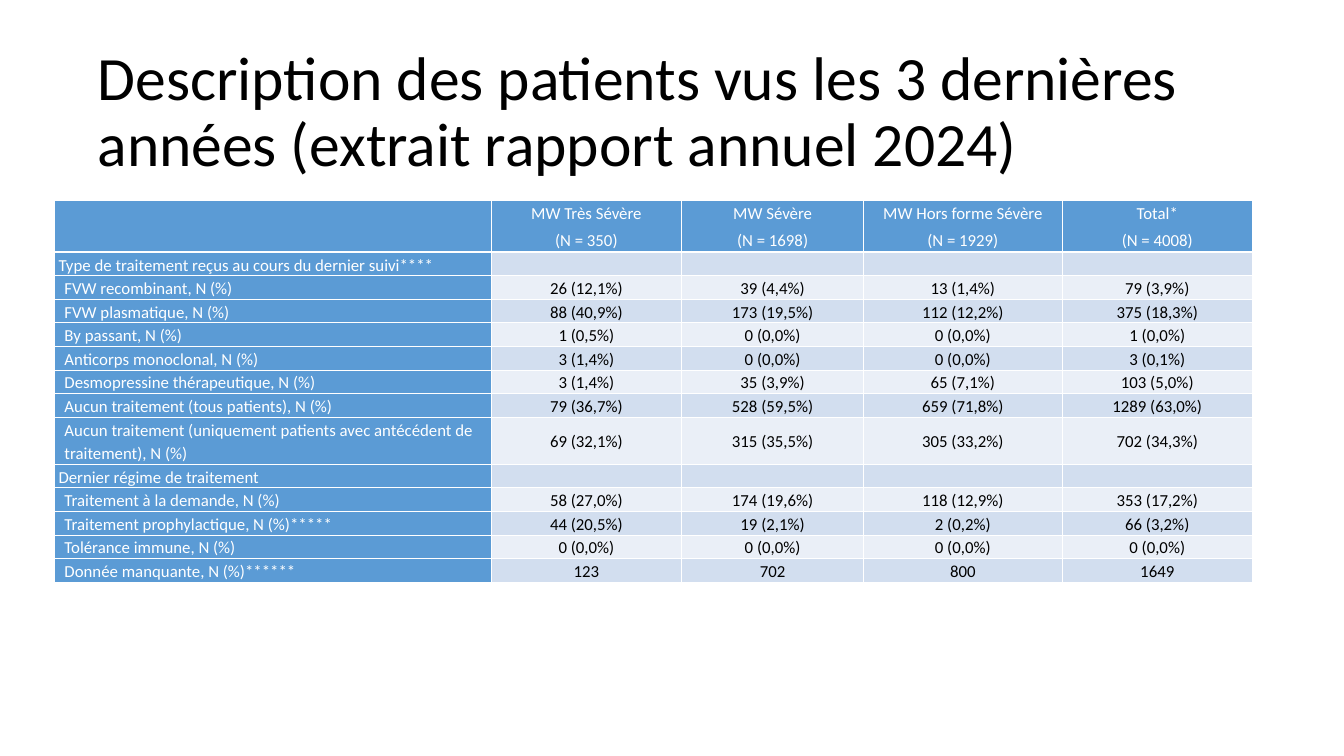
import dataclasses

import lxml.etree
import pptx
import pptx.dml.color
import pptx.enum.text
import pptx.oxml.ns
import pptx.util

Cm = pptx.util.Cm
Pt = pptx.util.Pt
ALIGN = pptx.enum.text.PP_ALIGN
MIDDLE = pptx.enum.text.MSO_ANCHOR.MIDDLE

TITLE = "Description des patients vus les 3 dernières années (extrait rapport annuel 2024)"
GROUPS = ["", "MW Très Sévère\n(N = 350)", "MW Sévère\n(N = 1698)",
          "MW Hors forme Sévère\n(N = 1929)", "Total*\n(N = 4008)"]
# A row holding only its label is a section heading.
TREATMENTS = [
    ["Type de traitement reçus au cours du dernier suivi****"],
    ["FVW recombinant, N (%)", "26 (12,1%)", "39 (4,4%)", "13 (1,4%)", "79 (3,9%)"],
    ["FVW plasmatique, N (%)", "88 (40,9%)", "173 (19,5%)", "112 (12,2%)", "375 (18,3%)"],
    ["By passant, N (%)", "1 (0,5%)", "0 (0,0%)", "0 (0,0%)", "1 (0,0%)"],
    ["Anticorps monoclonal, N (%)", "3 (1,4%)", "0 (0,0%)", "0 (0,0%)", "3 (0,1%)"],
    ["Desmopressine thérapeutique, N (%)", "3 (1,4%)", "35 (3,9%)", "65 (7,1%)", "103 (5,0%)"],
    ["Aucun traitement (tous patients), N (%)",
     "79 (36,7%)", "528 (59,5%)", "659 (71,8%)", "1289 (63,0%)"],
    ["Aucun traitement (uniquement patients avec antécédent de traitement), N (%)",
     "69 (32,1%)", "315 (35,5%)", "305 (33,2%)", "702 (34,3%)"],
    ["Dernier régime de traitement"],
    ["Traitement à la demande, N (%)", "58 (27,0%)", "174 (19,6%)", "118 (12,9%)", "353 (17,2%)"],
    ["Traitement prophylactique, N (%)*****", "44 (20,5%)", "19 (2,1%)", "2 (0,2%)", "66 (3,2%)"],
    ["Tolérance immune, N (%)", "0 (0,0%)", "0 (0,0%)", "0 (0,0%)", "0 (0,0%)"],
    ["Donnée manquante, N (%)******", "123", "702", "800", "1649"],
]
COLUMN_WIDTHS = [22, 9.6, 9.17, 10, 9.6]
HEADER_HEIGHT, ROW_HEIGHT, WRAPPED_HEIGHT = 2.62, 1.09, 2.26
LONGEST_LABEL = max((row[0] for row in TREATMENTS), key=len)


@dataclasses.dataclass(frozen=True)
class Theme:
    font: str = "Calibri"
    title_size: int = 88
    table_size: int = 24
    ink: str = "000000"
    light: str = "FFFFFF"
    accent: str = "5B9BD5"
    bands: tuple = ("D2DEEF", "EAEFF7")
    rule: int = 1
    header_rule: int = 3


def rgb(code):
    return pptx.dml.color.RGBColor.from_string(code)


class SlideBuilder:
    def __init__(self, slide, theme):
        self.slide = slide
        self.theme = theme

    def style(self, paragraph, size, color, align, spacing):
        paragraph.alignment = align
        paragraph.line_spacing = spacing
        paragraph.font.name = self.theme.font
        paragraph.font.size = Pt(size)
        paragraph.font.color.rgb = rgb(color)

    def title(self, text, left, top, width, height):
        title = self.slide.shapes.title
        title.left, title.top, title.width, title.height = map(Cm, (left, top, width, height))
        frame = title.text_frame
        frame.text = text
        frame.word_wrap = True
        frame.auto_size = pptx.enum.text.MSO_AUTO_SIZE.NONE
        frame.vertical_anchor = MIDDLE
        self.style(frame.paragraphs[0], self.theme.title_size, self.theme.ink, ALIGN.LEFT, 0.9)

    def borders(self, cell, top, bottom):
        """Rule all four sides; top and bottom are widths in points."""
        properties = cell._tc.get_or_add_tcPr()
        rule = self.theme.rule
        for side, width in (("L", rule), ("R", rule), ("T", top), ("B", bottom)):
            line = lxml.etree.SubElement(
                properties, pptx.oxml.ns.qn(f"a:ln{side}"), w=str(Pt(width)))
            fill = lxml.etree.SubElement(line, pptx.oxml.ns.qn("a:solidFill"))
            lxml.etree.SubElement(fill, pptx.oxml.ns.qn("a:srgbClr"), val=self.theme.light)

    def cell(self, cell, text, fill, color, align, indent=0.0):
        cell.fill.solid()
        cell.fill.fore_color.rgb = rgb(fill)
        cell.vertical_anchor = MIDDLE
        cell.margin_left = cell.margin_right = Cm(0.2)
        cell.margin_top = cell.margin_bottom = 0
        if not text:
            return
        cell.text = text
        for index, paragraph in enumerate(cell.text_frame.paragraphs):
            if indent:
                paragraph._p.get_or_add_pPr().set("marL", str(Cm(indent)))
            self.style(paragraph, self.theme.table_size, color, align, 1.15)
            if index:
                paragraph.space_before = Pt(5)

    def table(self, header, body, left, top, widths, heights):
        theme = self.theme
        table = self.slide.shapes.add_table(
            len(heights), len(widths), Cm(left), Cm(top),
            Cm(sum(widths)), Cm(sum(heights))).table
        for column, width in zip(table.columns, widths):
            column.width = Cm(width)
        for row, height in zip(table.rows, heights):
            row.height = Cm(height)

        for r, values in enumerate([header] + body):
            is_section = len(values) == 1
            padded = values + [""] * (len(widths) - len(values))
            for c, text in enumerate(padded):
                cell = table.cell(r, c)
                self.borders(cell, theme.header_rule if r == 1 else theme.rule,
                             theme.header_rule if r == 0 else theme.rule)
                if r == 0:
                    self.cell(cell, text, theme.accent, theme.light, ALIGN.CENTER)
                elif c == 0:
                    self.cell(cell, text, theme.accent, theme.light, ALIGN.LEFT,
                              0 if is_section else 0.3)
                else:
                    self.cell(cell, text, theme.bands[(r - 1) % 2], theme.ink, ALIGN.CENTER)


def main():
    presentation = pptx.Presentation()
    presentation.slide_width, presentation.slide_height = Cm(67.73), Cm(38.1)
    slide = presentation.slides.add_slide(presentation.slide_layouts.get_by_name("Title Only"))
    builder = SlideBuilder(slide, Theme())
    builder.title(TITLE, 4.66, 2.03, 58.42, 7.37)
    heights = [HEADER_HEIGHT] + [
        WRAPPED_HEIGHT if row[0] == LONGEST_LABEL else ROW_HEIGHT for row in TREATMENTS]
    builder.table(GROUPS, TREATMENTS, 2.75, 10.08, COLUMN_WIDTHS, heights)
    presentation.save("out.pptx")


if __name__ == "__main__":
    main()
